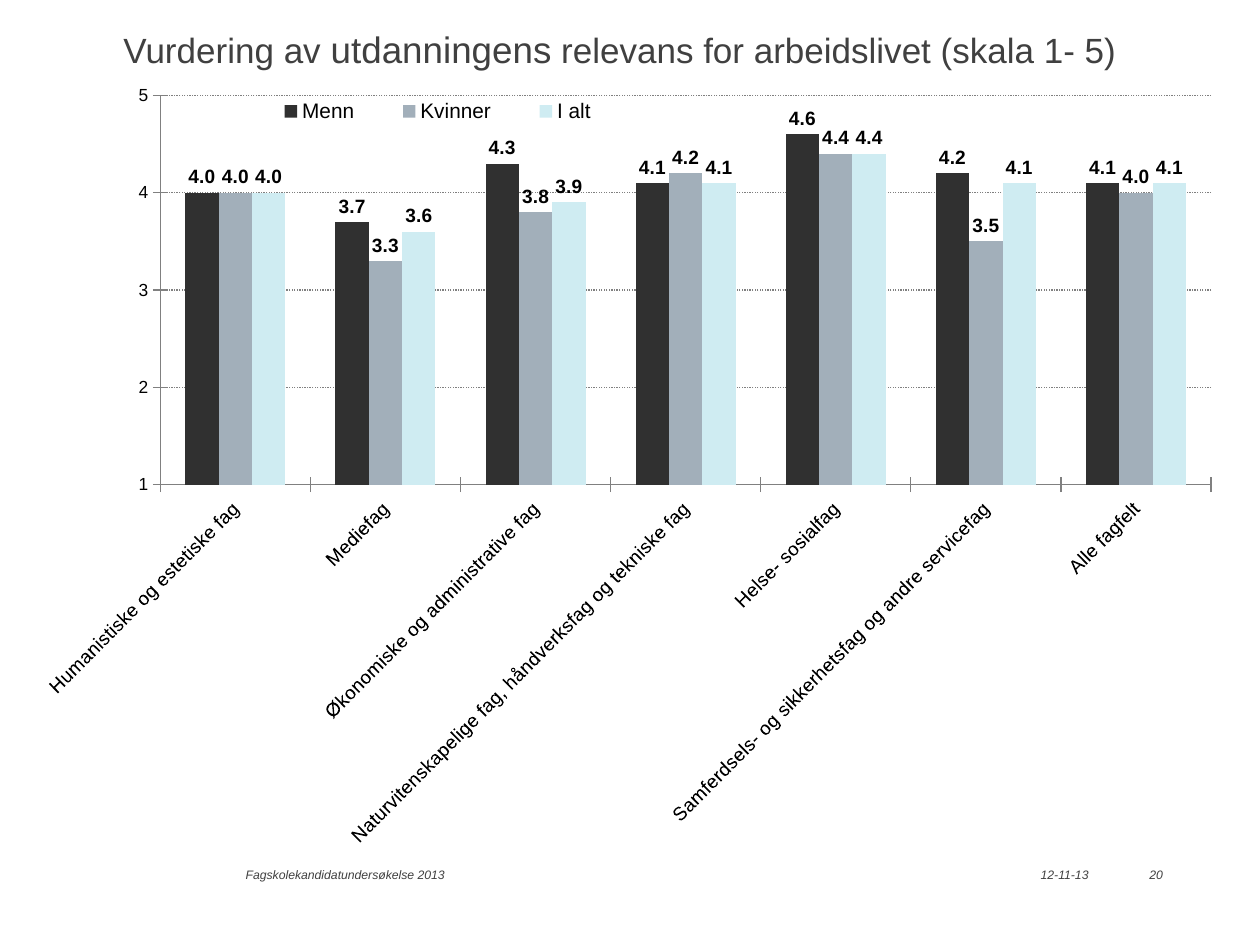
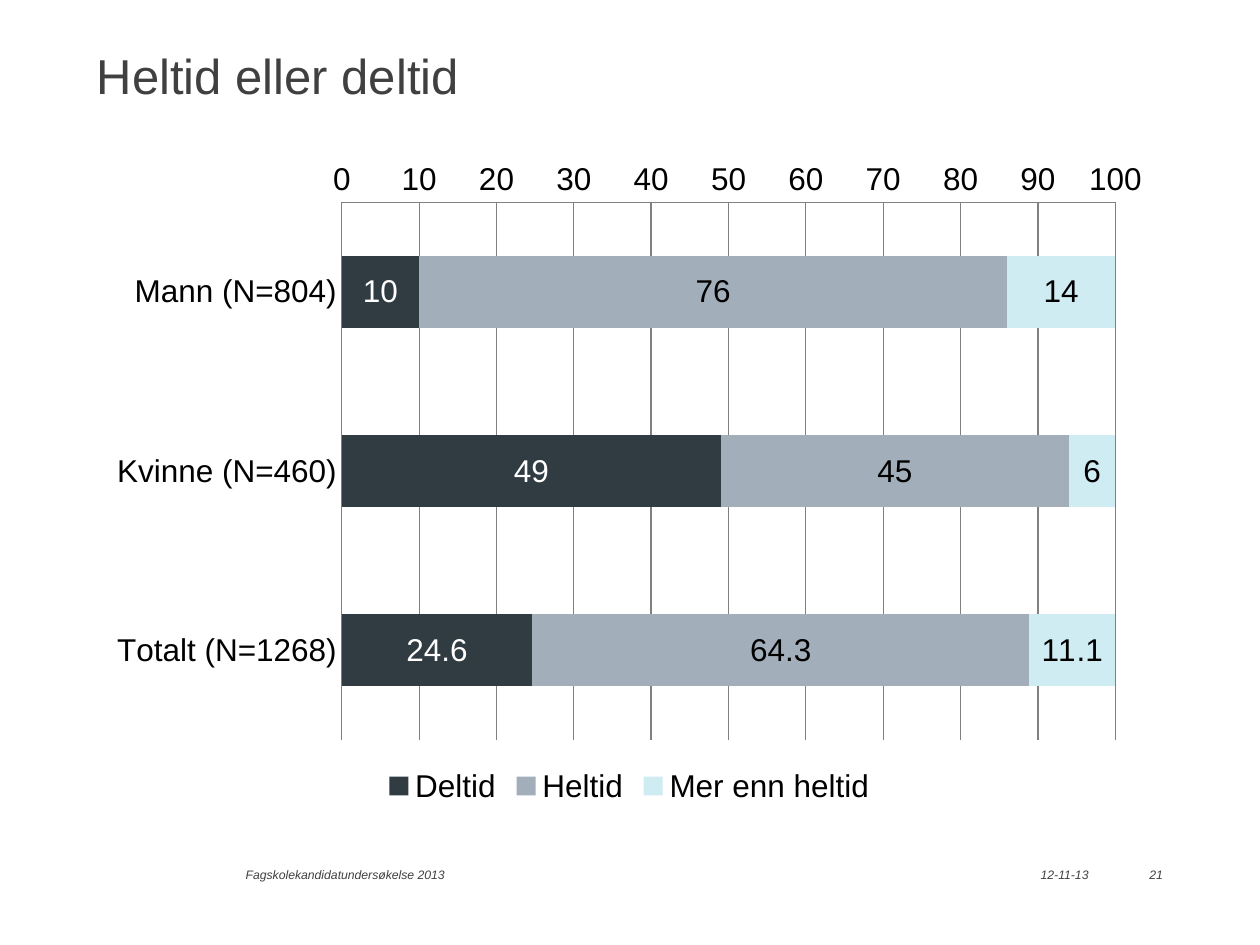
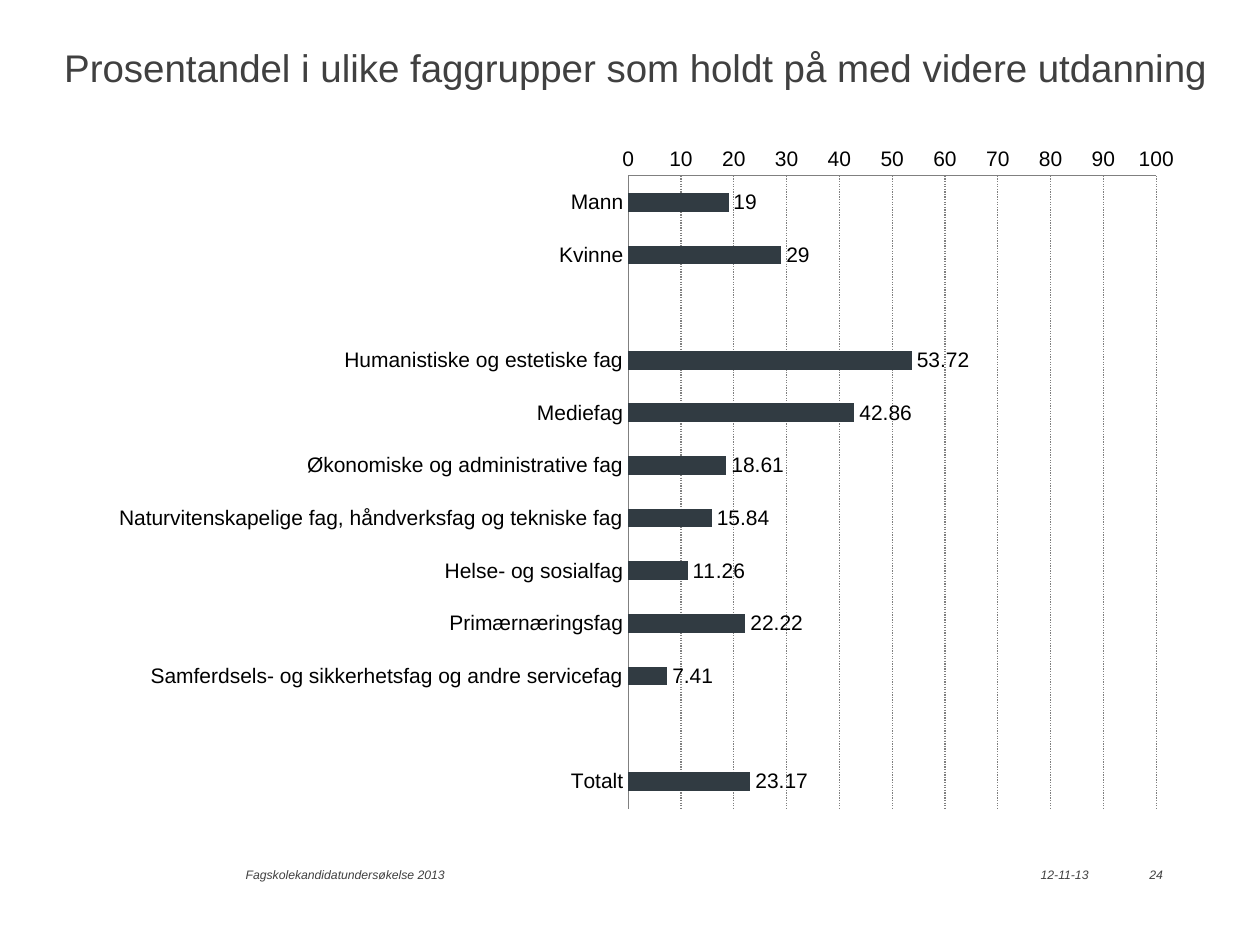
from pptx import Presentation
from pptx.chart.data import CategoryChartData
from pptx.dml.color import RGBColor
from pptx.enum.chart import XL_CHART_TYPE, XL_LABEL_POSITION, XL_LEGEND_POSITION, XL_TICK_MARK
from pptx.enum.dml import MSO_LINE
from pptx.enum.text import MSO_ANCHOR, PP_ALIGN
from pptx.oxml import parse_xml
from pptx.oxml.ns import nsdecls, qn
from pptx.util import Inches, Pt

WIDTH, HEIGHT = Inches(10), Inches(7.5)
FONT = "Arial"
BLACK = RGBColor(0x00, 0x00, 0x00)
WHITE = RGBColor(0xFF, 0xFF, 0xFF)
GREY = RGBColor(0x40, 0x40, 0x40)
AXIS_GREY = RGBColor(0x80, 0x80, 0x80)
CHARCOAL = RGBColor(0x30, 0x30, 0x30)
SLATE = RGBColor(0x31, 0x3B, 0x42)
STEEL = RGBColor(0xA2, 0xAF, 0xBA)
ICE = RGBColor(0xCF, 0xEC, 0xF2)

COLUMNS = XL_CHART_TYPE.COLUMN_CLUSTERED
BARS = XL_CHART_TYPE.BAR_CLUSTERED
STACKED = XL_CHART_TYPE.BAR_STACKED
CENTER, OUTSIDE = XL_LABEL_POSITION.CENTER, XL_LABEL_POSITION.OUTSIDE_END
LEGEND_RIGHT, LEGEND_BOTTOM = XL_LEGEND_POSITION.RIGHT, XL_LEGEND_POSITION.BOTTOM
TICK_NONE, TICK_CROSS = XL_TICK_MARK.NONE, XL_TICK_MARK.CROSS
SOLID, DOTTED = MSO_LINE.SOLID, MSO_LINE.ROUND_DOT
LEFT, RIGHT = PP_ALIGN.LEFT, PP_ALIGN.RIGHT
TOP, MIDDLE = MSO_ANCHOR.TOP, MSO_ANCHOR.MIDDLE

FOOTER_TOP, FOOTER_HEIGHT = 91.73, 1.6
HUMANITIES = "Humanistiske og estetiske fag"
MEDIA = "Mediefag"
ECONOMICS = "Økonomiske og administrative fag"
SCIENCE = "Naturvitenskapelige fag, håndverksfag og tekniske fag"
TRANSPORT = "Samferdsels- og sikkerhetsfag og andre servicefag"


def area(left, top, width, height):
    """Turn percentages of the slide into lengths."""
    return [round(share * side / 100) for share, side in
            zip((left, top, width, height), (WIDTH, HEIGHT, WIDTH, HEIGHT))]


def add_text(slide, box, runs, italic=False, align=LEFT, anchor=TOP):
    """Add one line of (text, size) runs."""
    tf = slide.shapes.add_textbox(*area(*box)).text_frame
    tf.word_wrap = True
    tf.vertical_anchor = anchor
    tf.margin_left = tf.margin_top = tf.margin_right = tf.margin_bottom = 0
    p = tf.paragraphs[0]
    p.alignment = align
    for text, size in runs:
        r = p.add_run()
        r.text = text
        r.font.name = FONT
        r.font.size = Pt(size)
        r.font.italic = italic
        r.font.color.rgb = GREY


def add_page(prs, title_box, title_runs, number):
    """Add a slide with its title and footer."""
    slide = prs.slides.add_slide(prs.slide_layouts[6])
    add_text(slide, title_box, title_runs)
    for left, width, text, align in ((19.5, 31.7, "Fagskolekandidatundersøkelse 2013", LEFT),
                                     (82.6, 6, "12-11-13", LEFT),
                                     (88.6, 3.7, str(number), RIGHT)):
        add_text(slide, (left, FOOTER_TOP, width, FOOTER_HEIGHT), [(text, 7)],
                 italic=True, align=align, anchor=MIDDLE)
    return slide


def add_bars(slide, box, kind, categories, series, size, gap=150):
    """Add a bar chart from (name, values, colour) series."""
    data = CategoryChartData()
    data.categories = categories
    for name, values, _ in series:
        data.add_series(name, values)
    chart = slide.shapes.add_chart(kind, *area(*box), data).chart
    chart.has_title = False
    chart.has_legend = False
    chart.font.name = FONT
    chart.font.size = Pt(size)
    chart.font.color.rgb = BLACK
    plot = chart.plots[0]
    plot.vary_by_categories = False
    plot.gap_width = gap
    plot.overlap = 100 if kind == STACKED else 0
    for ser, (_, _, color) in zip(plot.series, series):
        ser.invert_if_negative = False
        ser.format.fill.solid()
        ser.format.fill.fore_color.rgb = color
    return chart


def style_axes(chart, sizes, low, high, step, tick, dash, reverse=False):
    """Set scale, ticks, lines and gridlines of both axes."""
    value = chart.value_axis
    value.minimum_scale, value.maximum_scale, value.major_unit = low, high, step
    value.has_major_gridlines = True
    grid = value.major_gridlines.format.line
    grid.color.rgb = AXIS_GREY
    grid.width = Pt(0.75)
    grid.dash_style = dash
    for axis, size in zip((chart.category_axis, value), sizes):
        axis.major_tick_mark = tick
        axis.minor_tick_mark = TICK_NONE
        axis.tick_labels.font.size = Pt(size)
        axis.format.line.color.rgb = AXIS_GREY
        axis.format.line.width = Pt(0.75)
    value.tick_labels.number_format = "#,##0"
    value.tick_labels.number_format_is_linked = False
    chart.category_axis.reverse_order = reverse


def slant_categories(chart, degrees):
    """Turn the category labels."""
    axis = chart.element.find(".//" + qn("c:catAx"))
    axis.find(qn("c:txPr")).find(qn("a:bodyPr")).set("rot", str(degrees * 60000))


def add_labels(chart, size, position, fmt="General", bold=False, colors=(BLACK,) * 3):
    """Show the value of every bar."""
    for ser, color in zip(chart.plots[0].series, colors):
        labels = ser.data_labels
        labels.show_value = True
        labels.number_format = fmt
        labels.number_format_is_linked = False
        labels.position = position
        labels.font.name = FONT
        labels.font.size = Pt(size)
        labels.font.bold = bold
        labels.font.color.rgb = color


def add_legend(chart, position, size):
    """Add a legend beside the plot."""
    chart.has_legend = True
    chart.legend.position = position
    chart.legend.include_in_layout = False
    chart.legend.font.size = Pt(size)


def set_layout(chart, tag, index, shares, target=""):
    """Fix a chart part at shares of the chart's size."""
    part = chart.element.find(".//" + qn(tag))
    old = part.find(qn("c:layout"))
    if old is not None:
        part.remove(old)
    modes = '<c:xMode val="edge"/><c:yMode val="edge"/>'
    sides = "".join(f'<c:{side} val="{share}"/>' for side, share in zip("xywh", shares))
    part.insert(index, parse_xml(
        f'<c:layout {nsdecls("c")}><c:manualLayout>{target}{modes}{sides}'
        '</c:manualLayout></c:layout>'))


def relevance_slide(prs):
    """Build the slide on relevance for working life."""
    slide = add_page(prs, (9.8, 2.8, 84.6, 6.27),
                     [("Vurdering av ", 20), ("utdanningens", 21),
                      (" relevans for arbeidslivet (skala 1- 5)", 20)], 20)
    fields = [HUMANITIES, MEDIA, ECONOMICS, SCIENCE, "Helse- sosialfag", TRANSPORT, "Alle fagfelt"]
    series = [("Menn", (4, 3.7, 4.3, 4.1, 4.6, 4.2, 4.1), CHARCOAL),
              ("Kvinner", (4, 3.3, 3.8, 4.2, 4.4, 3.5, 4), STEEL),
              ("I alt", (4, 3.6, 3.9, 4.1, 4.4, 4.1, 4.1), ICE)]
    chart = add_bars(slide, (3.5, 9.07, 94.5, 84.27), COLUMNS, fields, series, 10)
    style_axes(chart, (11, 10), 1, 5, 1, TICK_CROSS, DOTTED)
    slant_categories(chart, -45)
    add_labels(chart, 11, OUTSIDE, "####.0", bold=True)
    add_legend(chart, LEGEND_RIGHT, 12)
    set_layout(chart, "c:legend", 1, (0.16, 0.01, 0.33, 0.04))
    set_layout(chart, "c:plotArea", 0, (0.09, 0.01, 0.89, 0.49),
               '<c:layoutTarget val="inner"/>')


def working_hours_slide(prs):
    """Build the slide on full-time and part-time work."""
    slide = add_page(prs, (7.7, 4.8, 84.6, 10.27), [("Heltid eller deltid", 28)], 21)
    groups = ["Mann (N=804)", "Kvinne (N=460)", "Totalt (N=1268)"]
    series = [("Deltid", (10, 49, 24.6), SLATE),
              ("Heltid", (76, 45, 64.3), STEEL),
              ("Mer enn heltid", (14, 6, 11.1), ICE)]
    chart = add_bars(slide, (7.6, 15.73, 84.7, 70), STACKED, groups, series, 18)
    style_axes(chart, (18, 18), 0, 100, 10, TICK_NONE, SOLID, reverse=True)
    add_labels(chart, 18, CENTER, colors=(WHITE, BLACK, BLACK))
    add_legend(chart, LEGEND_BOTTOM, 18)


def further_education_slide(prs):
    """Build the slide on further education by field."""
    slide = add_page(prs, (5.1, 4.67, 91.3, 7.6),
                     [("Prosentandel i ulike faggrupper som holdt på med videre utdanning", 22)], 24)
    shares = [("Mann", 19), ("Kvinne", 29), ("", None), (HUMANITIES, 53.72), (MEDIA, 42.86),
              (ECONOMICS, 18.61), (SCIENCE, 15.84), ("Helse- og sosialfag", 11.26),
              ("Primærnæringsfag", 22.22), (TRANSPORT, 7.41), ("", None), ("Totalt", 23.17)]
    groups, values = zip(*shares)
    chart = add_bars(slide, (7.7, 14.27, 87.2, 72.67), BARS, groups,
                     [("Series 1", values, SLATE)], 18, gap=182)
    style_axes(chart, (12, 12), 0, 100, 10, TICK_NONE, DOTTED, reverse=True)
    add_labels(chart, 12, OUTSIDE)


def main():
    """Build and save the presentation."""
    prs = Presentation()
    prs.slide_width, prs.slide_height = WIDTH, HEIGHT
    relevance_slide(prs)
    working_hours_slide(prs)
    further_education_slide(prs)
    prs.save("out.pptx")


if __name__ == "__main__":
    main()
